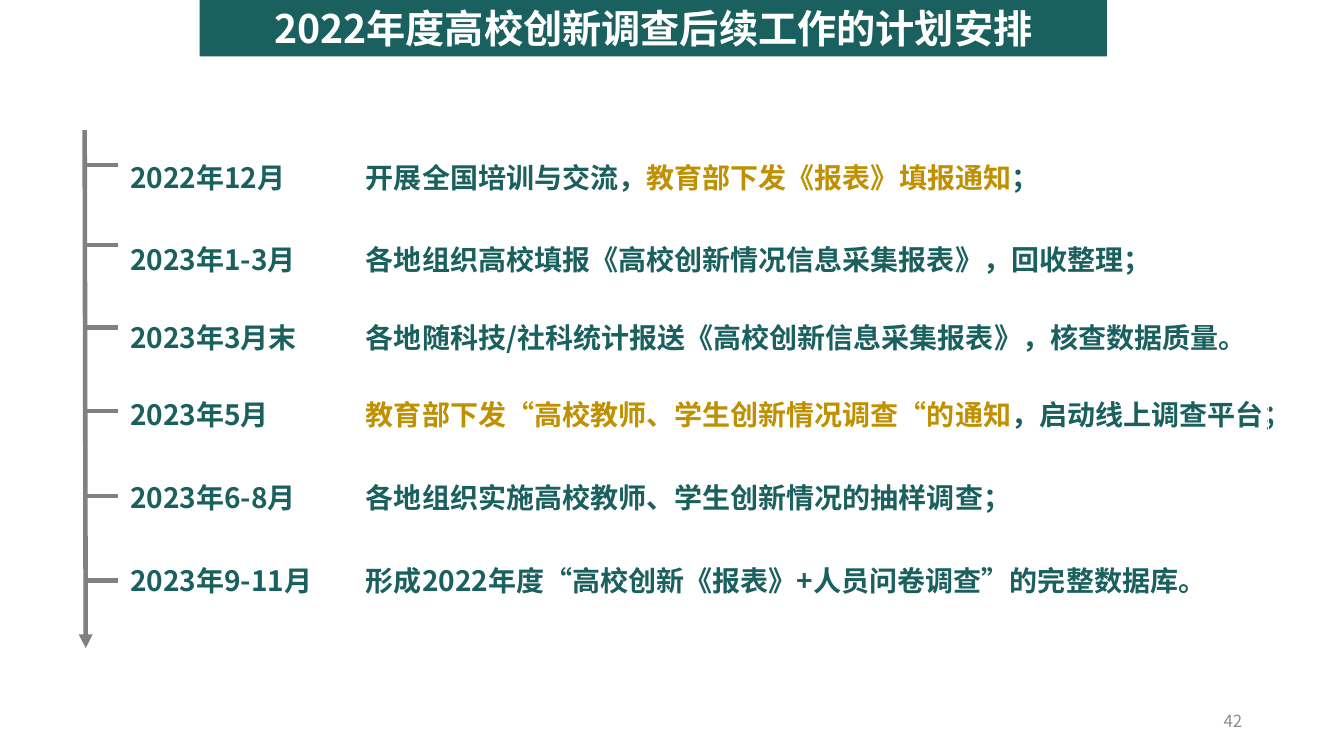
from lxml.etree import SubElement
from pptx import Presentation
from pptx.dml.color import RGBColor
from pptx.enum.shapes import MSO_CONNECTOR as Connector, MSO_SHAPE as Shape
from pptx.enum.text import MSO_ANCHOR as Anchor, PP_ALIGN as Align
from pptx.oxml.ns import qn
from pptx.util import Inches, Pt

FONT = "Noto Sans CJK SC"
GREEN = RGBColor(0x1A, 0x60, 0x5E)
GOLD = RGBColor(0xBF, 0x90, 0x00)
GREY = RGBColor(0x80, 0x80, 0x80)
PALE = RGBColor(0x8C, 0x8C, 0x8C)
WHITE = RGBColor(0xFF, 0xFF, 0xFF)

TITLE = "2022年度高校创新调查后续工作的计划安排"
PAGE_NUMBER = "42"
# Each step: date, then the pieces of its task with their colours
STEPS = [
    ("2022年12月", [("开展全国培训与交流，", GREEN),
                   ("教育部下发《报表》填报通知", GOLD), ("；", GREEN)]),
    ("2023年1-3月", [("各地组织高校填报《高校创新情况信息采集报表》，回收整理；", GREEN)]),
    ("2023年3月末", [("各地随科技/社科统计报送《高校创新信息采集报表》，核查数据质量。", GREEN)]),
    ("2023年5月", [("教育部下发“高校教师、学生创新情况调查“的通知", GOLD),
                  ("，启动线上调查平台；", GREEN)]),
    ("2023年6-8月", [("各地组织实施高校教师、学生创新情况的抽样调查；", GREEN)]),
    ("2023年9-11月", [("形成2022年度“高校创新《报表》+人员问卷调查”的完整数据库。", GREEN)]),
]
COLUMN_WIDTHS = [2.34, 8.96]
ROW_HEIGHTS = [0.82, 0.82, 0.72, 0.82, 0.82, 0.82]
TICK_HEIGHTS = [1.64, 2.43, 3.25, 4.08, 4.92, 5.76]
AXIS_X, TICK_END = 0.84, 1.17


def add_span(para, text, size, color, bold=False):
    span = para.add_run()
    span.text = text
    span.font.size = Pt(size)
    span.font.bold = bold
    span.font.color.rgb = color
    span.font.name = FONT
    SubElement(span.font._element, qn("a:ea"), typeface=FONT)


def add_line(page, start, end, width, arrow=False):
    """Draw a grey line, with an arrowhead at its start if asked."""
    ends = [Inches(value) for value in (*start, *end)]
    line = page.shapes.add_connector(Connector.STRAIGHT, *ends)
    line.line.color.rgb = GREY
    line.line.width = Pt(width)
    if arrow:
        SubElement(line.line._get_or_add_ln(), qn("a:headEnd"), type="triangle")
    SubElement(line._element.spPr, qn("a:effectLst"))


def add_title(page):
    banner = page.shapes.add_shape(Shape.RECTANGLE, Inches(1.98), 0, Inches(9), Inches(0.56))
    banner.shadow.inherit = False
    banner.fill.solid()
    banner.fill.fore_color.rgb = GREEN
    banner.line.fill.background()
    banner.text_frame.vertical_anchor = Anchor.MIDDLE
    para = banner.text_frame.paragraphs[0]
    para.alignment = Align.CENTER
    add_span(para, TITLE, 28, WHITE, bold=True)


def add_schedule(page):
    frame = page.shapes.add_table(len(STEPS), 2, Inches(1.28), Inches(1.33),
                                  Inches(sum(COLUMN_WIDTHS)), Inches(sum(ROW_HEIGHTS)))
    table = frame.table
    table.first_row = table.horz_banding = False
    for column, width in zip(table.columns, COLUMN_WIDTHS):
        column.width = Inches(width)
    for row, height, (date, task) in zip(table.rows, ROW_HEIGHTS, STEPS):
        row.height = Inches(height)
        for cell, pieces in zip(row.cells, ([(date, GREEN)], task)):
            cell.fill.background()
            cell.vertical_anchor = Anchor.MIDDLE
            cell.margin_left = cell.margin_right = cell.margin_top = Inches(0.01)
            cell.margin_bottom = 0
            for text, color in pieces:
                add_span(cell.text_frame.paragraphs[0], text, 20, color, bold=True)


def add_timeline(page):
    add_line(page, (0.85, 6.43), (AXIS_X, 1.29), 3.25, arrow=True)
    for y in TICK_HEIGHTS:
        add_line(page, (AXIS_X, y), (TICK_END, y), 3)


def add_page_number(page):
    box = page.shapes.add_textbox(Inches(9.42), Inches(6.95), Inches(3), Inches(0.4))
    box.text_frame.word_wrap = True
    box.text_frame.vertical_anchor = Anchor.MIDDLE
    para = box.text_frame.paragraphs[0]
    para.alignment = Align.RIGHT
    add_span(para, PAGE_NUMBER, 12, PALE)


def main():
    deck = Presentation()
    deck.slide_width, deck.slide_height = Inches(13.33), Inches(7.5)
    page = deck.slides.add_slide(deck.slide_layouts[6])
    add_title(page)
    add_schedule(page)
    add_timeline(page)
    add_page_number(page)
    deck.save("out.pptx")


if __name__ == "__main__":
    main()
